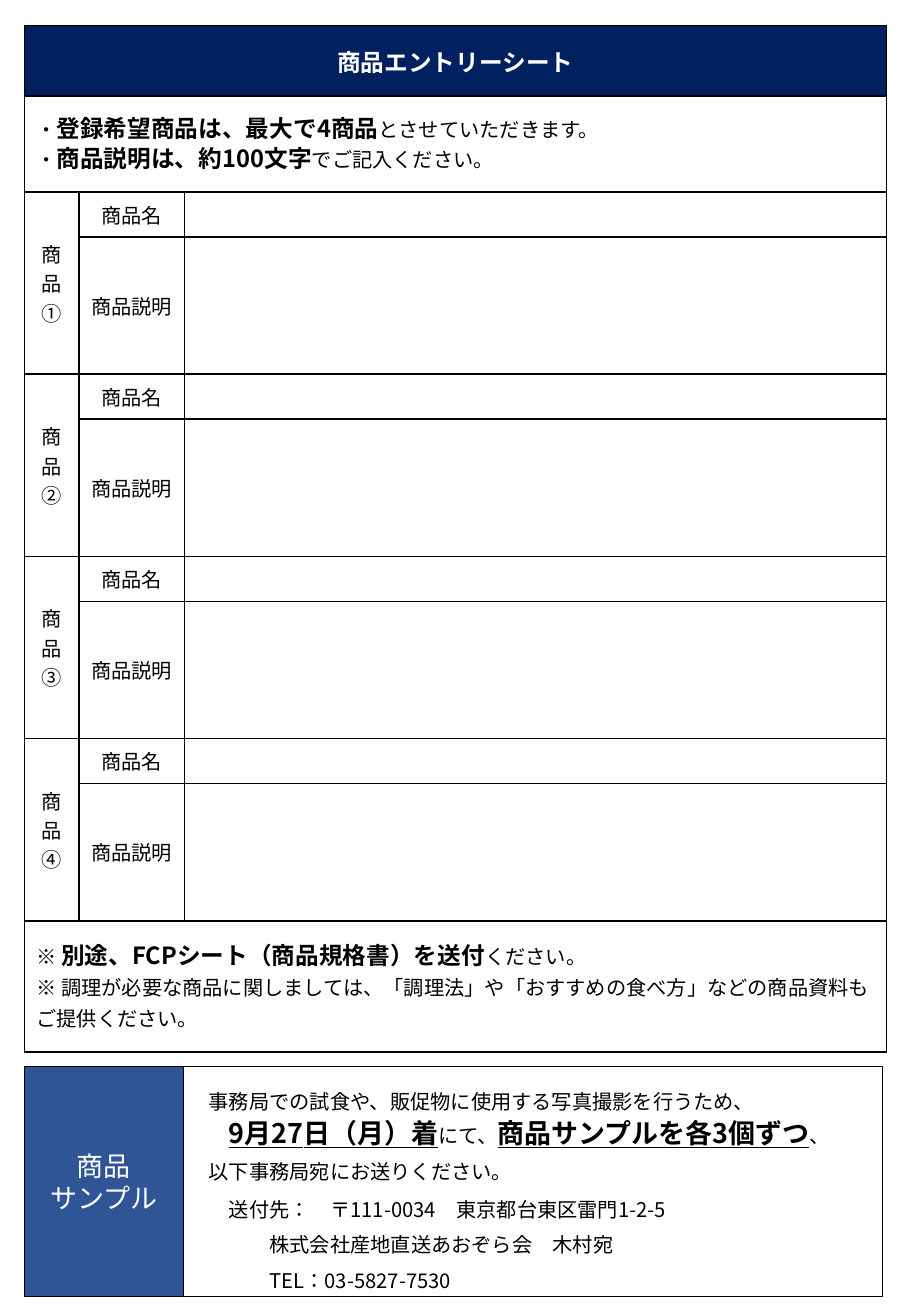
import pptx
import pptx.util
import pptx.dml.color
import pptx.enum.lang
import pptx.enum.shapes
import pptx.enum.text
import pptx.oxml.ns
from dataclasses import dataclass
from lxml import etree

Align = pptx.enum.text.PP_ALIGN
Anchor = pptx.enum.text.MSO_ANCHOR


@dataclass
class Theme:
    font: str = "Noto Sans CJK JP"
    navy: str = "002060"
    blue: str = "2F5597"
    white: str = "FFFFFF"
    black: str = "000000"
    body: int = 12
    head: int = 14
    large: int = 16
    rule: float = 1
    frame: float = 0.5


def color(code):
    return pptx.dml.color.RGBColor.from_string(code)


def node(parent, tag, **attrs):
    return etree.SubElement(parent, pptx.oxml.ns.qn(tag), **attrs)


class Sheet:
    """Style and current slide; lengths are columns and rows of a grid."""
    COLS, ROWS = 750, 1083

    def __init__(self, deck, theme):
        self.theme = theme
        self.col = deck.slide_width / self.COLS
        self.row = deck.slide_height / self.ROWS
        self.slide = deck.slides.add_slide(deck.slide_layouts[6])

    def at(self, x, y, w, h):
        return (round(x * self.col), round(y * self.row),
                round(w * self.col), round(h * self.row))

    def run(self, para, text, size=None, tone=None, bold=False, under=False):
        run = para.add_run()
        run.text = text
        font = run.font
        font.size = pptx.util.Pt(size or self.theme.body)
        font.bold = bold
        font.underline = under
        font.color.rgb = color(tone or self.theme.black)
        font.name = self.theme.font
        font.language_id = pptx.enum.lang.MSO_LANGUAGE_ID.JAPANESE
        node(run._r.get_or_add_rPr(), "a:ea", typeface=self.theme.font)

    def lines(self, frame, paras, align=Align.LEFT, lead=None):
        """Each paragraph is a list of (text, style) runs; None breaks a line."""
        for i, runs in enumerate(paras):
            para = frame.add_paragraph() if i else frame.paragraphs[0]
            para.alignment = align
            if lead:
                para.line_spacing = pptx.util.Pt(lead)
            for item in runs:
                if item is None:
                    para.add_line_break()
                else:
                    self.run(para, item[0], **item[1])

    def box(self, place, fill, paras=()):
        shape = self.slide.shapes.add_shape(
            pptx.enum.shapes.MSO_SHAPE.RECTANGLE, *self.at(*place))
        shape.shadow.inherit = False
        shape.fill.solid()
        shape.fill.fore_color.rgb = color(fill)
        shape.line.color.rgb = color(self.theme.black)
        shape.line.width = pptx.util.Pt(self.theme.frame)
        shape.text_frame.vertical_anchor = Anchor.MIDDLE
        self.lines(shape.text_frame, paras, Align.CENTER)

    def text(self, place, paras, lead):
        frame = self.slide.shapes.add_textbox(*self.at(*place)).text_frame
        frame.word_wrap = True
        frame.auto_size = pptx.enum.text.MSO_AUTO_SIZE.SHAPE_TO_FIT_TEXT
        self.lines(frame, paras, lead=lead)

    def table(self, x, y, cols, rows):
        table = self.slide.shapes.add_table(
            len(rows), len(cols), *self.at(x, y, sum(cols), sum(rows))).table
        table.first_row = table.horz_banding = False
        for column, width in zip(table.columns, cols):
            column.width = round(width * self.col)
        for row, height in zip(table.rows, rows):
            row.height = round(height * self.row)
            for cell in row.cells:
                self.border(cell)
                cell.fill.background()
                node(cell.text_frame.paragraphs[0]._p, "a:endParaRPr",
                     sz=str(self.theme.body * 100))
        return table

    def border(self, cell):
        props = cell._tc.get_or_add_tcPr()
        for side in ("a:lnL", "a:lnR", "a:lnT", "a:lnB"):
            line = node(props, side, w=str(pptx.util.Pt(self.theme.rule)))
            node(node(line, "a:solidFill"), "a:srgbClr", val=self.theme.black)

    def cell(self, table, row, col, paras, span=(1, 1), fill=None,
             align=Align.CENTER, lead=None):
        cell = table.cell(row, col)
        if span != (1, 1):
            cell.merge(table.cell(row + span[0] - 1, col + span[1] - 1))
        cell.vertical_anchor = Anchor.MIDDLE
        if fill:
            cell.fill.solid()
            cell.fill.fore_color.rgb = color(fill)
        self.lines(cell.text_frame, paras, align, lead)


def main():
    deck = pptx.Presentation()
    deck.slide_width = pptx.util.Inches(7.5)
    deck.slide_height = pptx.util.Inches(10.83)
    theme = Theme()
    sheet = Sheet(deck, theme)

    plain = {}
    strong = dict(size=theme.head, bold=True)
    title = dict(strong, tone=theme.white)
    label = dict(size=theme.large, tone=theme.white)
    key = dict(size=theme.large, bold=True, under=True)
    wide = (1, 3)

    # Entry table: title and rules
    items = "①②③④"
    form = sheet.table(20, 21, [45, 87, 578],
                       [58, 79] + [37, 113] * len(items) + [108])
    sheet.cell(form, 0, 0, [[("商品エントリーシート", title)]], wide, theme.navy)
    sheet.cell(form, 1, 0, [[
        ("・", plain), ("登録希望商品は、最大で4商品", strong),
        ("とさせていただきます。", plain), None,
        ("・", plain), ("商品説明は、約100文字", strong),
        ("でご記入ください。", plain)]], wide, align=Align.LEFT, lead=18)

    # One pair of rows per product
    for i, mark in enumerate(items):
        top = 2 + 2 * i
        sheet.cell(form, top, 0, [[("商品" + mark, plain)]], (2, 1))
        sheet.cell(form, top, 1, [[("商品名", plain)]])
        sheet.cell(form, top + 1, 1, [[("商品説明", plain)]])

    # Notes under the products
    sheet.cell(form, 2 + 2 * len(items), 0, [
        [("※ ", dict(bold=True)),
         ("別途、FCPシート（商品規格書）を送付", strong),
         ("ください。", plain)],
        [("※ 調理が必要な商品に関しましては、「調理法」や「おすすめの食べ方」"
          "などの商品資料もご提供ください。", plain)],
    ], wide, align=Align.LEFT, lead=18)

    # Sample panel
    sheet.box((20, 878, 131, 189), theme.blue,
              [[("商品", label)], [("サンプル", label)]])
    sheet.box((151, 878, 576, 189), theme.white)
    sheet.text((162, 882, 559, 97), [
        [("事務局での試食や、販促物に使用する写真撮影を行うため、", plain)],
        [("　", plain), ("9月27日（月）着", key), ("にて、", plain),
         ("商品サンプルを各3個ずつ", key), ("、", plain)],
        [("以下事務局宛にお送りください。", plain)],
    ], lead=21)

    # Delivery address
    sheet.text((162, 971, 559, 96), [
        [("　送付先：　〒111-0034　東京都台東区雷門1-2-5", plain)],
        [("\t株式会社産地直送あおぞら会　木村宛", plain)],
        [("\tTEL：03-5827-7530", plain)],
    ], lead=21)

    deck.save("out.pptx")


if __name__ == "__main__":
    main()
